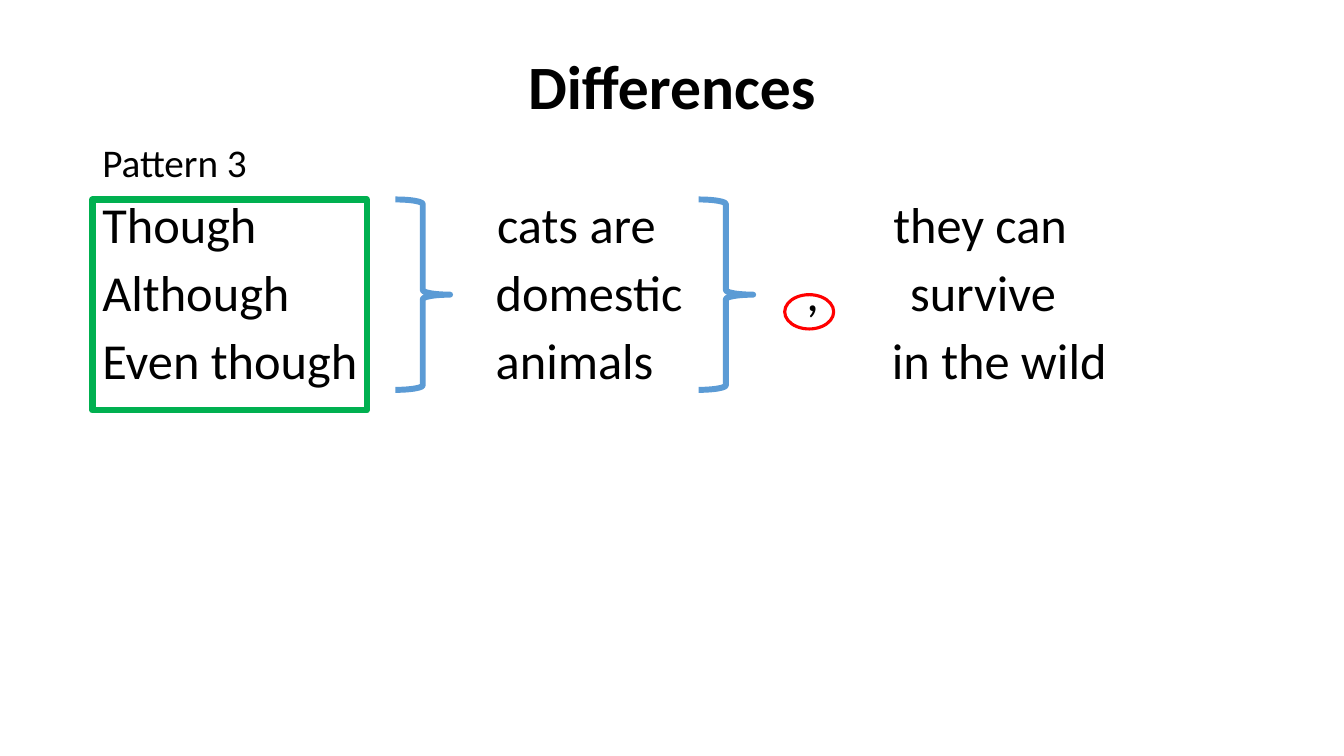
from lxml import etree
from pptx import Presentation
from pptx.dml.color import RGBColor
from pptx.enum.shapes import MSO_SHAPE
from pptx.enum.text import MSO_ANCHOR, MSO_AUTO_SIZE, PP_ALIGN
from pptx.oxml.ns import qn
from pptx.util import Pt

BRACE, OVAL, BOX = MSO_SHAPE.RIGHT_BRACE, MSO_SHAPE.OVAL, MSO_SHAPE.RECTANGLE
MIDDLE, TOP = MSO_ANCHOR.MIDDLE, MSO_ANCHOR.TOP
CENTER, LEFT = PP_ALIGN.CENTER, PP_ALIGN.LEFT
NO_FIT = MSO_AUTO_SIZE.NONE

MARGIN, CONTENT_WIDTH = 66, 828
MARK_TOP = 142.5
ROWS = [
    (["Though", "cats are", "they can"], [282, 565]),
    (["Although", "domestic", ",", "survive"], [281, 503, 577]),
    (["Even though", "animals", "in the wild"], [281, 564]),
]


def color(value):
    """Turn a hex string into a colour."""
    return RGBColor.from_string(value)


def place(shape, left, top, width, height):
    """Set the position and size of a shape in points."""
    shape.left, shape.top = Pt(left), Pt(top)
    shape.width, shape.height = Pt(width), Pt(height)


def set_frame(frame, anchor):
    """Prepare a wrapping text frame with fixed size."""
    frame.word_wrap = True
    frame.auto_size = NO_FIT
    frame.vertical_anchor = anchor


def write(para, text, size=36, bold=False, align=LEFT, before=10, stops=()):
    """Write formatted text into a paragraph, with optional tab stops."""
    para.alignment = align
    para.line_spacing = 0.9
    para.space_before = Pt(before)
    if stops:
        tabs = etree.SubElement(para._p.get_or_add_pPr(), qn("a:tabLst"))
        for stop in stops:
            etree.SubElement(tabs, qn("a:tab"), pos=str(Pt(stop)), algn="l")
    span = para.add_run()
    span.text = text
    span.font.name = "Calibri"
    span.font.size = Pt(size)
    span.font.bold = bold
    span.font.color.rgb = color("000000")


def add_title(page, text):
    """Fill the title placeholder."""
    title = page.shapes.title
    place(title, MARGIN, 28.75, CONTENT_WIDTH, 70)
    set_frame(title.text_frame, MIDDLE)
    write(title.text_frame.paragraphs[0], text, size=44, bold=True, align=CENTER, before=0)


def add_pattern(page, heading, rows):
    """Add the heading and the sentence parts aligned in columns."""
    box = page.shapes.add_textbox(Pt(MARGIN), Pt(98.75), Pt(CONTENT_WIDTH), Pt(388))
    frame = box.text_frame
    set_frame(frame, TOP)
    write(frame.paragraphs[0], heading, size=28)
    for parts, stops in rows:
        write(frame.add_paragraph(), "\t".join(parts), stops=stops)


def add_outline(page, kind, left, top, width, height, line, weight):
    """Add an unfilled shape with a coloured outline."""
    shape = page.shapes.add_shape(kind, Pt(left), Pt(top), Pt(width), Pt(height))
    shape.shadow.inherit = False
    shape.fill.background()
    shape.line.color.rgb = color(line)
    shape.line.width = Pt(weight)


def main():
    """Build and save the slide."""
    deck = Presentation()
    deck.slide_width, deck.slide_height = Pt(960), Pt(540)
    page = deck.slides.add_slide(deck.slide_layouts[5])
    add_title(page, "Differences")
    add_pattern(page, "Pattern 3", ROWS)
    for left in (282.5, 499):
        add_outline(page, BRACE, left, MARK_TOP, 39, 136, "5B9BD5", 4.25)
    add_outline(page, OVAL, 560.5, 210.5, 35, 24.5, "FF0000", 2.25)
    add_outline(page, BOX, MARGIN, MARK_TOP, 196, 150.5, "00B050", 4.5)
    deck.save("out.pptx")


if __name__ == "__main__":
    main()
